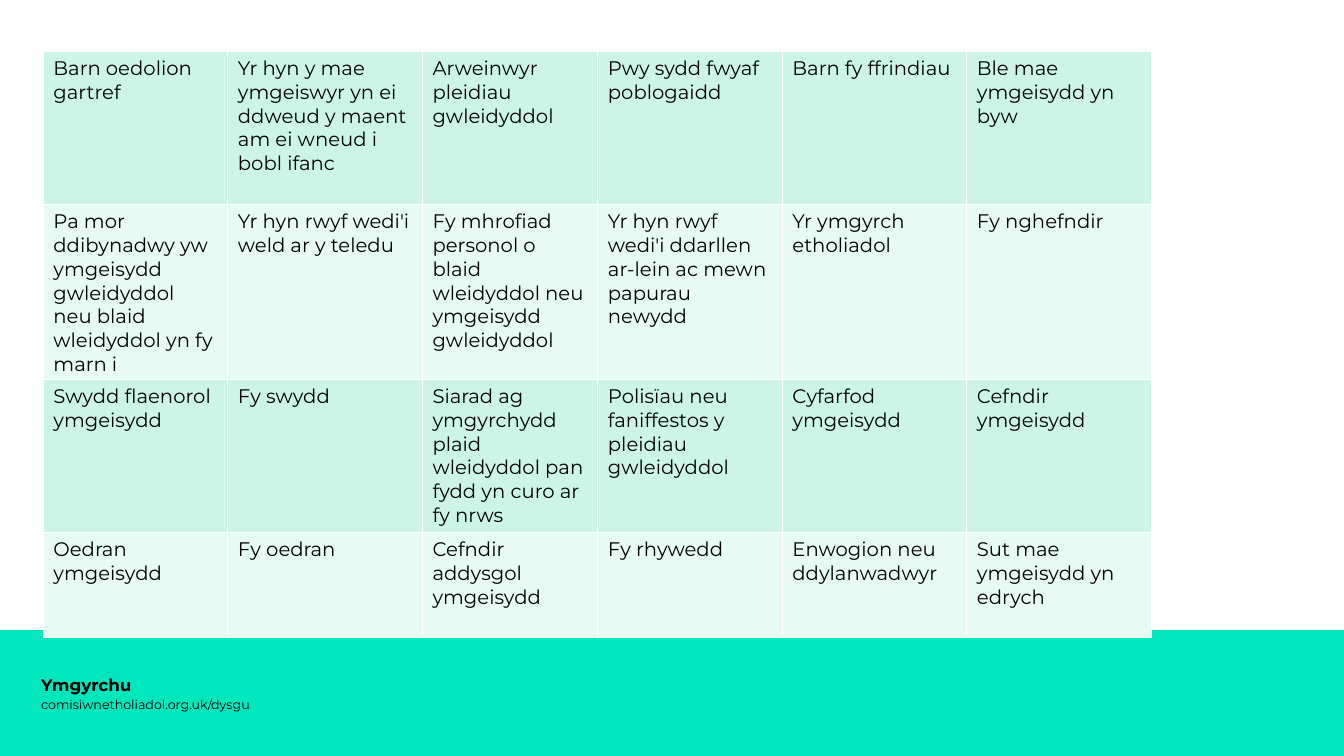
import pptx
import pptx.dml.color
import pptx.enum.shapes
import pptx.enum.text
import pptx.oxml
import pptx.oxml.ns
import pptx.util
from dataclasses import dataclass
from pptx.util import Inches


@dataclass(frozen=True)
class Theme:
    font: str = "Montserrat"
    text: str = "000000"
    footer: str = "00E7BD"
    border: str = "FFFFFF"
    bands: tuple = ("CCF5E8", "E7FAF4")
    table_size: int = 14
    title_size: int = 12
    address_size: int = 9
    border_width: int = 1


THEME = Theme()

FACTORS = [
    ["Barn oedolion gartref",
     "Yr hyn y mae ymgeiswyr yn ei ddweud y maent am ei wneud i bobl ifanc",
     "Arweinwyr pleidiau gwleidyddol",
     "Pwy sydd fwyaf poblogaidd",
     "Barn fy ffrindiau",
     "Ble mae ymgeisydd yn byw"],
    ["Pa mor ddibynadwy yw ymgeisydd gwleidyddol neu blaid wleidyddol yn fy marn i",
     "Yr hyn rwyf wedi'i weld ar y teledu",
     "Fy mhrofiad personol o blaid wleidyddol neu ymgeisydd gwleidyddol",
     "Yr hyn rwyf wedi'i ddarllen ar-lein ac mewn papurau newydd",
     "Yr ymgyrch etholiadol",
     "Fy nghefndir"],
    ["Swydd flaenorol ymgeisydd",
     "Fy swydd",
     "Siarad ag ymgyrchydd plaid wleidyddol pan fydd yn curo ar fy nrws",
     "Polisïau neu faniffestos y pleidiau gwleidyddol",
     "Cyfarfod ymgeisydd",
     "Cefndir ymgeisydd"],
    ["Oedran ymgeisydd",
     "Fy oedran",
     "Cefndir addysgol ymgeisydd",
     "Fy rhywedd",
     "Enwogion neu ddylanwadwyr",
     "Sut mae ymgeisydd yn edrych"],
]
COLUMN_WIDTHS = [1.83, 1.93, 1.74, 1.83, 1.83, 1.83]
ROW_HEIGHTS = [1.52, 1.52, 1.52, 1.04]


def colour(value):
    return pptx.dml.color.RGBColor.from_string(value)


def write(text_frame, text, size, bold=False):
    paragraph = text_frame.paragraphs[0]
    run = paragraph.add_run()
    run.text = text
    values = {"name": THEME.font, "size": pptx.util.Pt(size), "bold": bold}
    for font in (paragraph.font, run.font):
        for name, value in values.items():
            setattr(font, name, value)
        font.color.rgb = colour(THEME.text)


def add_footer_band(slide):
    band = slide.shapes.add_shape(
        pptx.enum.shapes.MSO_SHAPE.RECTANGLE,
        Inches(0), Inches(6.25), Inches(13.33), Inches(1.25))
    band.shadow.inherit = False
    band.fill.solid()
    band.fill.fore_color.rgb = colour(THEME.footer)
    band.line.fill.background()


def add_footer_text(slide, text, top, size, bold=False):
    box = slide.shapes.add_textbox(Inches(0.31), Inches(top), Inches(7.65), Inches(0.4))
    frame = box.text_frame
    frame.word_wrap = True
    frame.vertical_anchor = pptx.enum.text.MSO_ANCHOR.MIDDLE
    write(frame, text, size, bold)


def set_borders(cell):
    """Draw all four sides; the lines must precede the cell's fill."""
    properties = cell._tc.get_or_add_tcPr()
    width = pptx.util.Pt(THEME.border_width)
    for position, side in enumerate(("lnL", "lnR", "lnT", "lnB")):
        line = pptx.oxml.parse_xml(
            f'<a:{side} {pptx.oxml.ns.nsdecls("a")} w="{width}"><a:solidFill>'
            f'<a:srgbClr val="{THEME.border}"/></a:solidFill></a:{side}>')
        properties.insert(position, line)


def add_factor_table(slide):
    table = slide.shapes.add_table(
        len(FACTORS), len(COLUMN_WIDTHS), Inches(0.43), Inches(0.51),
        Inches(sum(COLUMN_WIDTHS)), Inches(sum(ROW_HEIGHTS))).table
    table.first_row = False
    for column, width in zip(table.columns, COLUMN_WIDTHS):
        column.width = Inches(width)
    for index, (row, height) in enumerate(zip(table.rows, ROW_HEIGHTS)):
        row.height = Inches(height)
        for cell, text in zip(row.cells, FACTORS[index]):
            cell.fill.solid()
            cell.fill.fore_color.rgb = colour(THEME.bands[index % 2])
            set_borders(cell)
            write(cell.text_frame, text, THEME.table_size)


def main():
    presentation = pptx.Presentation()
    presentation.slide_width = Inches(13.33)
    presentation.slide_height = Inches(7.5)
    slide = presentation.slides.add_slide(presentation.slide_layouts[6])
    add_footer_band(slide)
    add_footer_text(slide, "comisiwnetholiadol.org.uk/dysgu", 6.79, THEME.address_size)
    add_footer_text(slide, "Ymgyrchu", 6.59, THEME.title_size, bold=True)
    add_factor_table(slide)
    presentation.save("out.pptx")


if __name__ == "__main__":
    main()
